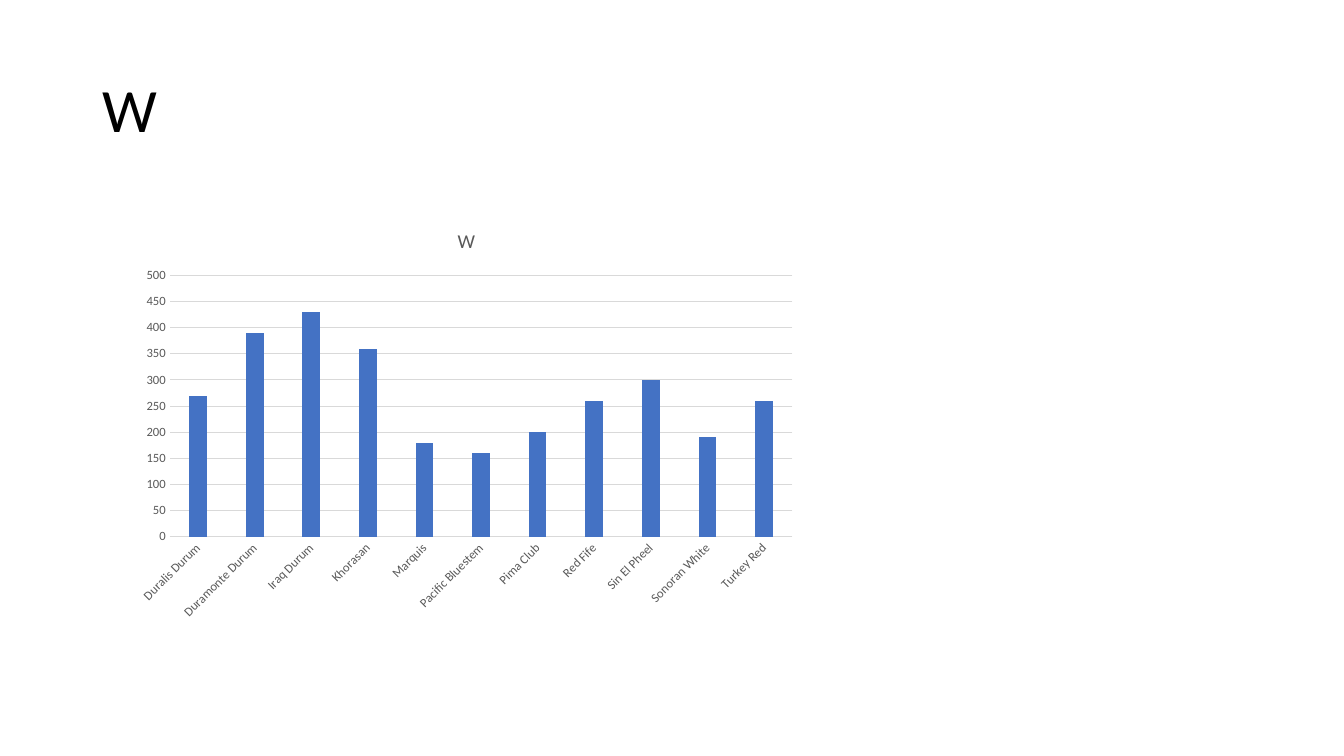
from pptx import Presentation
from pptx.chart.data import CategoryChartData
from pptx.dml.color import RGBColor
from pptx.enum.chart import XL_CHART_TYPE, XL_TICK_MARK
from pptx.enum.text import MSO_ANCHOR, PP_ALIGN
from pptx.util import Pt

COLUMNS = XL_CHART_TYPE.COLUMN_CLUSTERED
NO_TICKS = XL_TICK_MARK.NONE
MIDDLE = MSO_ANCHOR.MIDDLE
LEFT = PP_ALIGN.LEFT

BLACK = RGBColor(0x00, 0x00, 0x00)
GRAY = RGBColor(0x59, 0x59, 0x59)
LIGHT_GRAY = RGBColor(0xD9, 0xD9, 0xD9)
BLUE = RGBColor(0x44, 0x72, 0xC4)
FONT = "Calibri"
EMU_PER_PX = 914400 / 100.8

W_BY_WHEAT = {
    "Duralis Durum": 270,
    "Duramonte Durum": 390,
    "Iraq Durum": 430,
    "Khorasan": 360,
    "Marquis": 180,
    "Pacific Bluestem": 160,
    "Pima Club": 200,
    "Red Fife": 260,
    "Sin El Pheel": 300,
    "Sonoran White": 190,
    "Turkey Red": 260,
}


def px(*lengths):
    return [round(length * EMU_PER_PX) for length in lengths]


def set_font(font, size, color):
    font.name = FONT
    font.size = Pt(size)
    font.bold = False
    font.color.rgb = color


prs = Presentation()
prs.slide_width, prs.slide_height = px(1344, 756)
slide = prs.slides.add_slide(prs.slide_layouts[5])

# Slide title
heading = slide.shapes.title
heading.left, heading.top, heading.width, heading.height = px(92, 40, 1159, 146)
heading.text_frame.text = "W"
heading.text_frame.vertical_anchor = MIDDLE
heading_line = heading.text_frame.paragraphs[0]
heading_line.alignment = LEFT
heading_line.line_spacing = 0.9
set_font(heading_line.font, 44, BLACK)

# Column chart of W by wheat
wheat_data = CategoryChartData()
wheat_data.categories = list(W_BY_WHEAT)
wheat_data.add_series("W", list(W_BY_WHEAT.values()))
chart = slide.shapes.add_chart(COLUMNS, *px(127, 210, 679, 418), wheat_data).chart
set_font(chart.font, 10, BLACK)
chart.has_legend = False
chart.has_title = True
chart.chart_title.include_in_layout = False
chart.chart_title.text_frame.text = "W"
set_font(chart.chart_title.text_frame.paragraphs[0].font, 14, GRAY)

columns = chart.plots[0]
columns.gap_width = 219
columns.overlap = -27
columns.vary_by_categories = False
w_series = columns.series[0]
w_series.format.fill.solid()
w_series.format.fill.fore_color.rgb = BLUE
w_series.invert_if_negative = False

wheat_axis, w_axis = chart.category_axis, chart.value_axis
for axis in (wheat_axis, w_axis):
    axis.major_tick_mark = axis.minor_tick_mark = NO_TICKS
    set_font(axis.tick_labels.font, 9, GRAY)

w_axis.minimum_scale, w_axis.maximum_scale, w_axis.major_unit = 0, 500, 50
w_axis.has_major_gridlines = True
w_axis.format.line.fill.background()
for line in (wheat_axis.format.line, w_axis.major_gridlines.format.line):
    line.color.rgb = LIGHT_GRAY
    line.width = Pt(0.75)

# Wheat names slant upwards by 45 degrees
wheat_axis._element.txPr.bodyPr.set("rot", str(-45 * 60000))

prs.save("out.pptx")
